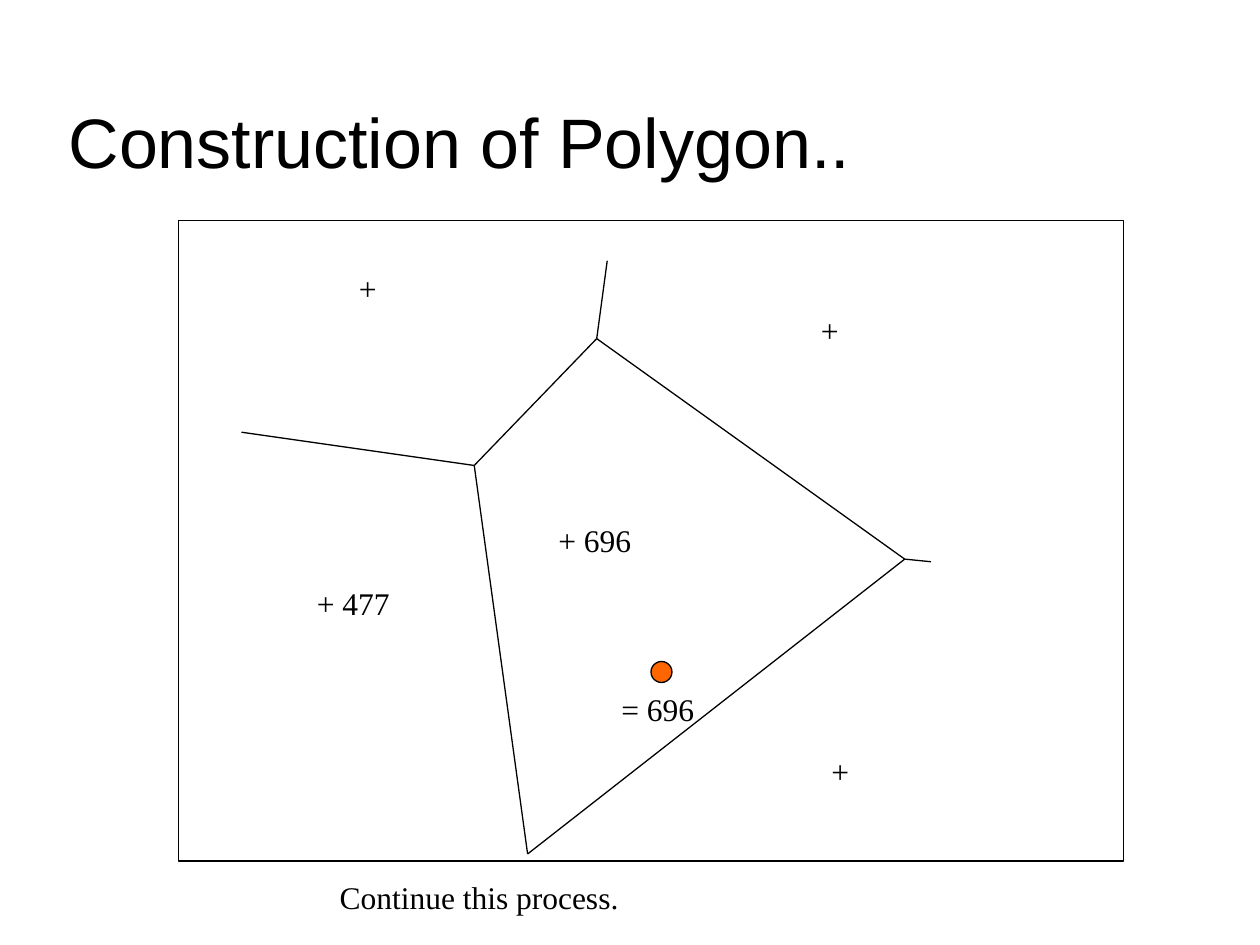
from typing import NamedTuple

import pptx
import pptx.dml.color
import pptx.enum.shapes
import pptx.enum.text
import pptx.util
from pptx.oxml.ns import qn

Pt = pptx.util.Pt
Shapes = pptx.enum.shapes.MSO_SHAPE
Anchor = pptx.enum.text.MSO_ANCHOR
AutoSize = pptx.enum.text.MSO_AUTO_SIZE

COLOURS = {"ink": "000000", "target": "FF6600"}
LINE_WIDTH = 0.75


class Label(NamedTuple):
    text: str
    left: float
    top: float
    width: float = 66


class Point(NamedTuple):
    x: float
    y: float


class Edge(NamedTuple):
    start: Point
    end: Point


LABELS = [
    Label("+", 198, 150),
    Label("+ 477", 174, 330),
    Label("+", 462, 174),
    Label("+ 696", 312, 294),
    Label("+", 468, 426),
    Label("= 696", 348, 391),
    Label("Continue this process.", 187, 498, 396),
]

WEST, NORTH = Point(271, 266), Point(341, 193.5)
EAST, SOUTH = Point(517, 319.5), Point(301.5, 488)
CORNERS = [WEST, NORTH, EAST, SOUTH]
POLYGON = [Edge(a, b) for a, b in zip(CORNERS, CORNERS[1:] + CORNERS[:1])]
RAYS = [
    Edge(WEST, Point(138, 247)),
    Edge(NORTH, Point(347, 149)),
    Edge(EAST, Point(532, 321)),
]


def colour(name: str) -> pptx.dml.color.RGBColor:
    return pptx.dml.color.RGBColor.from_string(COLOURS[name])


def write_text(frame, text: str, *, font: str, size: float, anchor=Anchor.TOP,
               auto_size=AutoSize.NONE) -> None:
    frame.word_wrap = True
    frame.auto_size = auto_size
    frame.vertical_anchor = anchor
    para = frame.paragraphs[0]
    para.alignment = pptx.enum.text.PP_ALIGN.LEFT
    span = para.add_run()
    span.text = text
    span.font.name = font
    span.font.size = Pt(size)
    span.font.color.rgb = colour("ink")


def outline(line) -> None:
    line.color.rgb = colour("ink")
    line.width = Pt(LINE_WIDTH)


def add_outlined(page, kind, left: float, top: float, width: float,
                 height: float, fill: str | None = None) -> None:
    shape = page.shapes.add_shape(kind, Pt(left), Pt(top), Pt(width), Pt(height))
    shape.shadow.inherit = False
    if fill:
        shape.fill.solid()
        shape.fill.fore_color.rgb = colour(fill)
    else:
        shape.fill.background()
    outline(shape.line)


def add_edge(page, edge: Edge) -> None:
    line = page.shapes.add_connector(
        pptx.enum.shapes.MSO_CONNECTOR.STRAIGHT,
        Pt(edge.start.x), Pt(edge.start.y), Pt(edge.end.x), Pt(edge.end.y))
    outline(line.line)
    properties = line._element.spPr
    properties.append(properties.makeelement(qn("a:effectLst"), {}))


def add_label(page, label: Label) -> None:
    box = page.shapes.add_textbox(
        Pt(label.left), Pt(label.top), Pt(label.width), Pt(29))
    write_text(box.text_frame, label.text, font="Times New Roman", size=18,
               auto_size=AutoSize.SHAPE_TO_FIT_TEXT)


def main() -> None:
    deck = pptx.Presentation()
    deck.slide_width, deck.slide_height = Pt(720), Pt(540)
    page = deck.slides.add_slide(deck.slide_layouts[5])

    title = page.shapes.title
    title.left, title.top, title.width, title.height = Pt(32), Pt(18), Pt(612), Pt(90)
    write_text(title.text_frame, "Construction of Polygon..", font="Arial",
               size=40, anchor=Anchor.BOTTOM)

    add_outlined(page, Shapes.RECTANGLE, 102, 126, 540, 366)
    for edge in POLYGON + RAYS:
        add_edge(page, edge)
    add_outlined(page, Shapes.OVAL, 372, 378, 12, 12, fill="target")
    for label in LABELS:
        add_label(page, label)

    deck.save("out.pptx")


if __name__ == "__main__":
    main()
